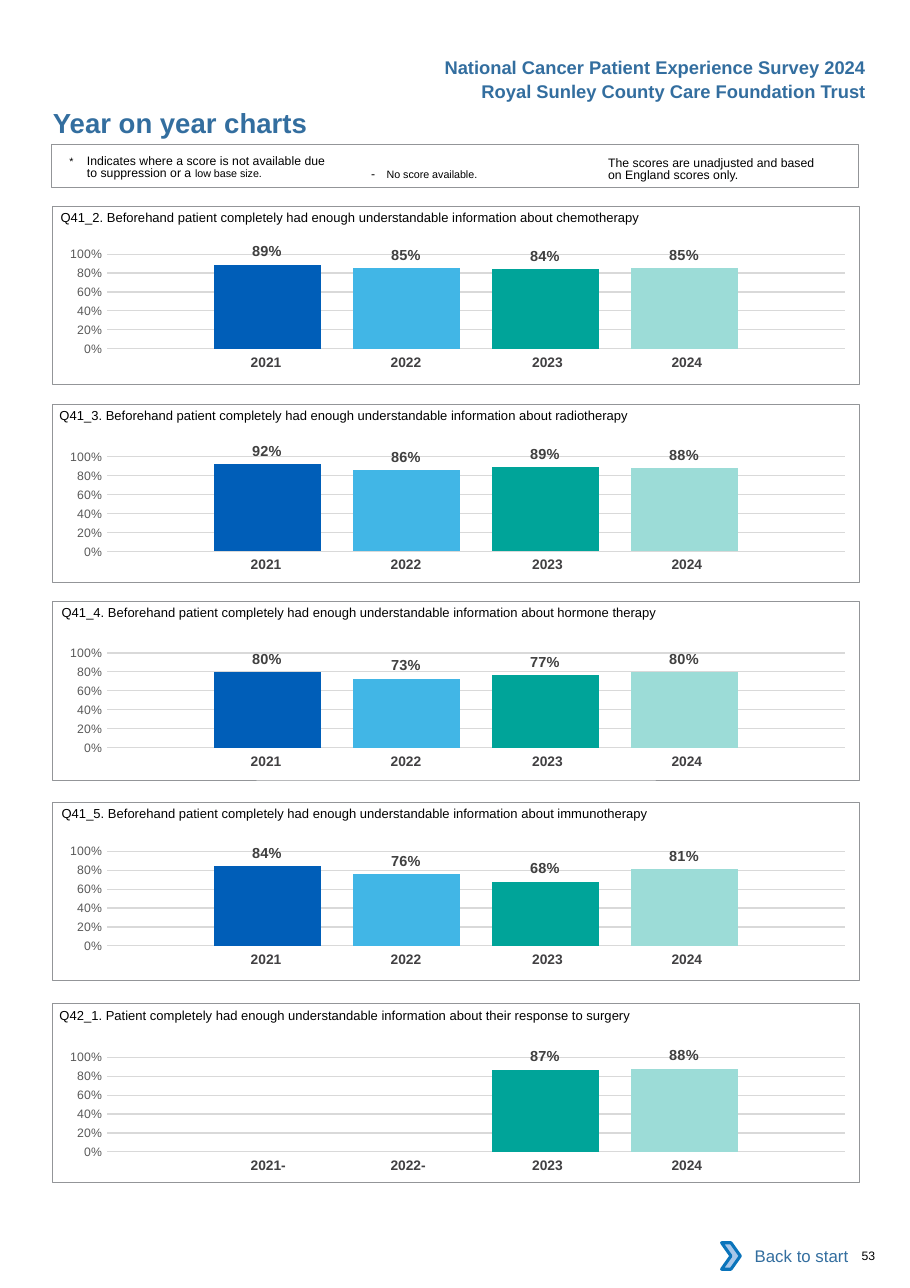
from pptx import Presentation
from pptx.chart.data import CategoryChartData
from pptx.dml.color import RGBColor
from pptx.enum.chart import XL_CHART_TYPE, XL_LABEL_POSITION, XL_TICK_MARK
from pptx.enum.shapes import MSO_SHAPE
from pptx.enum.text import MSO_ANCHOR, MSO_AUTO_SIZE, PP_ALIGN
from pptx.oxml import parse_xml
from pptx.oxml.ns import nsdecls, qn
from pptx.util import Inches, Pt

COLUMNS = XL_CHART_TYPE.COLUMN_CLUSTERED
OUTSIDE_END = XL_LABEL_POSITION.OUTSIDE_END
NO_TICK = XL_TICK_MARK.NONE
RECT, CHEVRON = MSO_SHAPE.RECTANGLE, MSO_SHAPE.CHEVRON
TOP, MIDDLE = MSO_ANCHOR.TOP, MSO_ANCHOR.MIDDLE
LEFT, CENTER, RIGHT = PP_ALIGN.LEFT, PP_ALIGN.CENTER, PP_ALIGN.RIGHT

# Content
TITLE = "Year on year charts"
HEADERS = [
    ("National Cancer Patient Experience Survey 2024", 0.46),
    ("Royal Sunley County Care Foundation Trust", 0.68),
]
YEARS = ["2021", "2022", "2023", "2024"]
INFORMED = "Beforehand patient completely had enough understandable information about "
# question, question left, frame top, chart top, yearly scores
PANELS = [
    ("Q41_2. " + INFORMED + "chemotherapy", 0.55, 1.87, 2.12, [0.89, 0.85, 0.84, 0.85]),
    ("Q41_3. " + INFORMED + "radiotherapy", 0.54, 3.67, 3.96, [0.92, 0.86, 0.89, 0.88]),
    ("Q41_4. " + INFORMED + "hormone therapy", 0.56, 5.46, 5.74, [0.8, 0.73, 0.77, 0.8]),
    ("Q41_5. " + INFORMED + "immunotherapy", 0.56, 7.28, 7.54, [0.84, 0.76, 0.68, 0.81]),
    ("Q42_1. Patient completely had enough understandable information about "
     "their response to surgery", 0.54, 9.11, 9.41, [None, None, 0.87, 0.88]),
]
# runs as (text, size)
SUPPRESSED = [("*\t", 7), ("Indicates where a score is not available due to suppression or a ", 8),
              ("low base size.", 7)]
NO_SCORE = [("-\t", 8), ("No score available.", 7)]
UNADJUSTED = [("The scores are unadjusted and based on England scores only.", 8)]

COLORS = {
    "heading": "336E9F", "text": "000000", "frame": "939598", "year": "414042",
    "label": "404040", "axis": "595959", "grid": "D9D9D9", "white": "FFFFFF",
    "chevron": "A8C7E9", "chevron_line": "0A74BB",
}
YEAR_COLORS = ["005EB8", "41B6E6", "00A499", "9CDCD7"]

# Geometry in inches
FRAME_LEFT, FRAME_W, FRAME_H = 0.48, 7.32, 1.62
CHART_LEFT, CHART_H = 0.39, 1.29
YEAR_LEFT, YEAR_DROP, YEAR_H = 1.73, 1.05, 0.27
YEAR_WIDTHS = [1.27, 1.27, 1.34, 1.27]
YEAR_RIGHT_INSETS = [0, 0, 0.04, 0.12]
PLOT = {"x": 0.079, "y": 0.145, "w": 0.915, "h": 0.666}

prs = Presentation()
prs.slide_width, prs.slide_height = Inches(8.26), Inches(11.69)
s = prs.slides.add_slide(prs.slide_layouts[5])


def rgb(name):
    return RGBColor.from_string(COLORS.get(name, name))


def style_font(font, size, color, bold=False):
    font.name, font.size, font.bold = "Arial", Pt(size), bold
    font.color.rgb = rgb(color)


def fill_text(sp, runs, color, bold=False, align=LEFT, anchor=TOP, insets=(0, 0, 0, 0)):
    tf = sp.text_frame
    tf.word_wrap, tf.auto_size, tf.vertical_anchor = True, MSO_AUTO_SIZE.NONE, anchor
    tf.margin_left, tf.margin_top, tf.margin_right, tf.margin_bottom = map(Inches, insets)
    p = tf.paragraphs[0]
    p.alignment = align
    for text, size in runs:
        r = p.add_run()
        r.text = text
        style_font(r.font, size, color, bold)
    return p


def add_text(box, runs, color="text", **options):
    return fill_text(s.shapes.add_textbox(*map(Inches, box)), runs, color, **options)


def add_shape(kind, box, fill=None, line=None, width=0.5):
    sp = s.shapes.add_shape(kind, *map(Inches, box))
    sp.shadow.inherit = False
    if fill:
        sp.fill.solid()
        sp.fill.fore_color.rgb = rgb(fill)
    else:
        sp.fill.background()
    if line:
        sp.line.color.rgb = rgb(line)
        sp.line.width = Pt(width)
    else:
        sp.line.fill.background()
    return sp


def hang(p, inches):
    pPr = p._p.get_or_add_pPr()
    pPr.set("marL", str(Inches(inches)))
    pPr.set("indent", str(-Inches(inches)))


def add_years(top, scores):
    box = (YEAR_LEFT, top, sum(YEAR_WIDTHS), YEAR_H)
    table = s.shapes.add_table(1, len(YEARS), *map(Inches, box)).table
    table.first_row = table.horz_banding = False
    for i, (year, score) in enumerate(zip(YEARS, scores)):
        table.columns[i].width = Inches(YEAR_WIDTHS[i])
        cell = table.cell(0, i)
        cell.fill.background()
        cell.margin_left = Inches(0.14 if score is None else 0.1)
        cell.margin_right = Inches(YEAR_RIGHT_INSETS[i])
        cell.text = year + "-" if score is None else year
        p = cell.text_frame.paragraphs[0]
        p.alignment = CENTER
        style_font(p.runs[0].font, 9, "year", True)


def add_scores(top, scores):
    data = CategoryChartData(number_format="0%")
    data.categories = ["1"]
    for i, score in enumerate(scores, 1):
        data.add_series(f"Series {i}", [score])
    box = (CHART_LEFT, top, FRAME_W, CHART_H)
    chart = s.shapes.add_chart(COLUMNS, *map(Inches, box), data).chart
    chart.has_legend = chart.has_title = False
    chart.font.name, chart.font.size = "Calibri", Pt(10)
    chart.font.color.rgb = rgb("text")
    chart.category_axis.visible = False

    axis = chart.value_axis
    axis.minimum_scale, axis.maximum_scale, axis.major_unit = 0, 1, 0.2
    axis.major_tick_mark = axis.minor_tick_mark = NO_TICK
    axis.format.line.fill.background()
    axis.major_gridlines.format.line.color.rgb = rgb("grid")
    axis.major_gridlines.format.line.width = Pt(0.75)
    axis.tick_labels.number_format = "0%"
    axis.tick_labels.number_format_is_linked = False
    style_font(axis.tick_labels.font, 8, "axis")

    plot = chart.plots[0]
    plot.gap_width, plot.overlap, plot.vary_by_categories = 200, -30, False
    for series, color in zip(plot.series, YEAR_COLORS):
        series.format.fill.solid()
        series.format.fill.fore_color.rgb = rgb(color)
        labels = series.data_labels
        labels.show_value, labels.position = True, OUTSIDE_END
        labels.number_format, labels.number_format_is_linked = "0%", False
        style_font(labels.font, 9.5, "label", True)

    # Fixed plot area on a clear background
    area = chart.element.find(".//" + qn("c:plotArea"))
    for layout in area.findall(qn("c:layout")):
        area.remove(layout)
    modes = "".join(f'<c:{k}Mode val="edge"/>' for k in "xy")
    sizes = "".join(f'<c:{k} val="{v}"/>' for k, v in PLOT.items())
    area.insert(0, parse_xml(
        f'<c:layout {nsdecls("c")}><c:manualLayout><c:layoutTarget val="inner"/>'
        f'{modes}{sizes}</c:manualLayout></c:layout>'))
    chart.element.find(qn("c:chart")).addnext(parse_xml(
        f'<c:spPr {nsdecls("c", "a")}><a:noFill/><a:ln><a:noFill/></a:ln></c:spPr>'))


# Headings
title = s.shapes.title
title.left, title.top, title.width, title.height = map(Inches, (0.48, 0.96, 4.5, 0.3))
fill_text(title, [(TITLE, 18)], "heading", bold=True)
for text, top in HEADERS:
    add_text((3.46, top, 4.5, 0.3), [(text, 12)], "heading", bold=True, align=RIGHT,
             insets=(0.1, 0.05, 0.1, 0.05))

# Key to the symbols
add_shape(RECT, (0.47, 1.31, FRAME_W, 0.39), line="frame", width=0.75)
p = add_text((0.63, 1.41, 2.4, 0.25), SUPPRESSED)
p.line_spacing = Pt(8.1)
hang(p, 0.16)
hang(add_text((3.37, 1.51, 1.6, 0.15), NO_SCORE), 0.14)
add_text((5.52, 1.43, 1.95, 0.25), UNADJUSTED).line_spacing = Pt(8.1)

# Question panels
for question, left, top, chart_top, scores in PANELS:
    add_years(chart_top + YEAR_DROP, scores)
    add_scores(chart_top, scores)
    add_shape(RECT, (FRAME_LEFT, top, FRAME_W, FRAME_H), line="frame")
    add_text((left, top + 0.03, 7.2, 0.15), [(question, 8.5)])

# Footer
back = add_shape(RECT, (6.62, 11.19, 1.18, 0.42), fill="white")
fill_text(back, [("Back to start", 11)], "heading", align=RIGHT, anchor=MIDDLE,
          insets=(0.1, 0.05, 0.1, 0.05))
add_shape(CHEVRON, (6.55, 11.28, 0.17, 0.24), fill="chevron", line="chevron_line", width=2)
add_text((7.82, 11.33, 0.41, 0.13), [("53", 8)])

prs.save("out.pptx")
